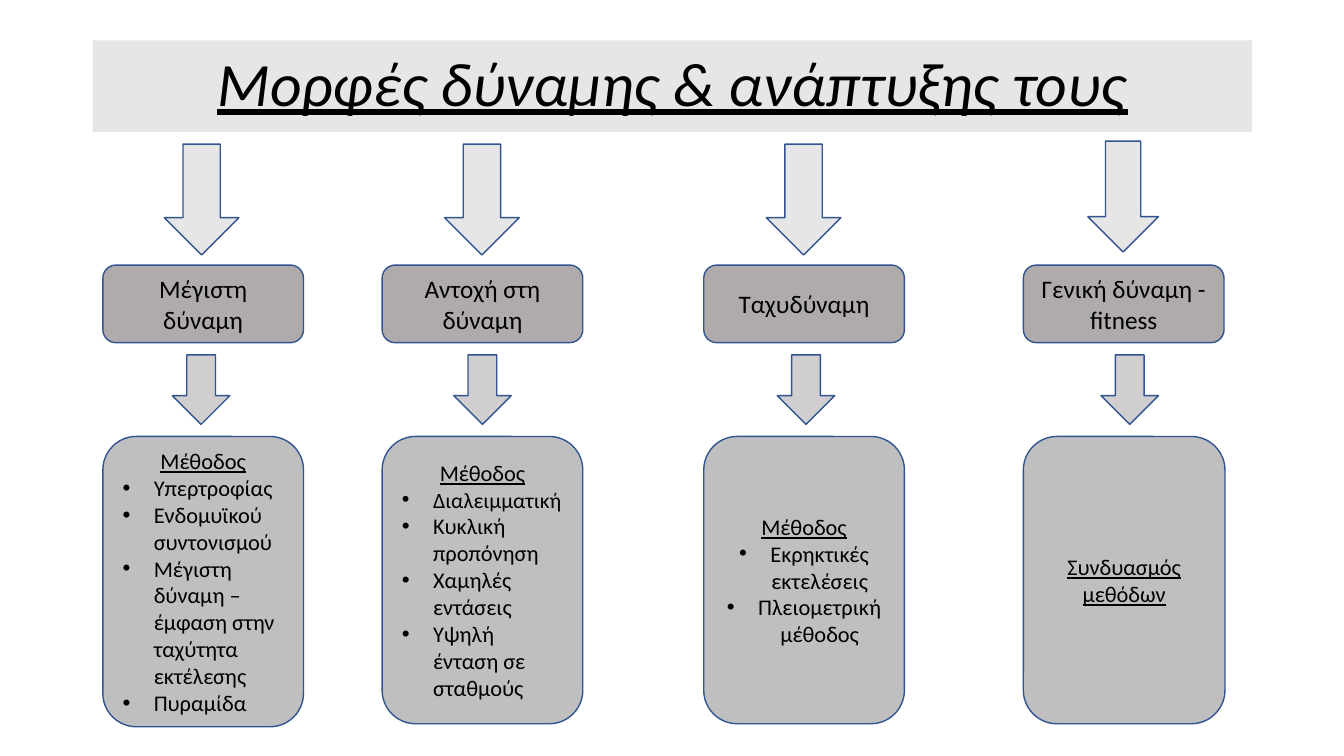
from lxml import etree
from pptx import Presentation
from pptx import util as u
from pptx.dml import color
from pptx.enum import shapes, text
from pptx.oxml import ns


def paint(value):
    return color.RGBColor.from_string(value)


class Diagram:
    """Draws the styled elements of one slide."""

    font = "Calibri"
    ink = "000000"
    outline = "325491"
    indent = 0.31

    def __init__(self, page):
        self.page = page

    def shape(self, kind, place, fill, line=True):
        item = self.page.shapes.add_shape(kind, *[u.Inches(length) for length in place])
        item.shadow.inherit = False
        item.fill.solid()
        item.fill.fore_color.rgb = paint(fill)
        if line:
            item.line.color.rgb = paint(self.outline)
            item.line.width = u.Pt(1)
        else:
            item.line.fill.background()
        return item

    def arrow(self, place, fill):
        return self.shape(shapes.MSO_SHAPE.DOWN_ARROW, place, fill)

    def box(self, place, fill):
        return self.shape(shapes.MSO_SHAPE.ROUNDED_RECTANGLE, place, fill)

    def title(self, place, fill, words):
        banner = self.shape(shapes.MSO_SHAPE.RECTANGLE, place, fill, line=False)
        para = self.label(banner, [words], 44, underline=True)[0]
        para.line_spacing = 0.9
        para.runs[0].font.italic = True

    def label(self, item, lines, size, underline=False):
        frame = item.text_frame
        frame.word_wrap = True
        frame.vertical_anchor = text.MSO_ANCHOR.MIDDLE
        frame.text = "\n".join(lines)
        for para in frame.paragraphs:
            para.alignment = text.PP_ALIGN.CENTER
            for span in para.runs:
                span.font.name = self.font
                span.font.size = u.Pt(size)
                span.font.color.rgb = paint(self.ink)
        frame.paragraphs[0].runs[0].font.underline = underline
        return frame.paragraphs

    def methods(self, item, heading, entries, align):
        paras = self.label(item, [heading, *entries], 16, underline=True)
        for para in paras[1:]:
            para.alignment = align
            self.bullet(para)
        return paras

    def bullet(self, para):
        props = para._p.get_or_add_pPr()
        props.set("marL", str(u.Inches(self.indent)))
        props.set("indent", str(-u.Inches(self.indent)))
        etree.SubElement(props, ns.qn("a:buFont")).set("typeface", "Arial")
        etree.SubElement(props, ns.qn("a:buChar")).set("char", "•")


def main():
    deck = Presentation()
    deck.slide_width, deck.slide_height = u.Inches(13.33), u.Inches(7.5)
    diagram = Diagram(deck.slides.add_slide(deck.slide_layouts[6]))
    diagram.title((0.92, 0.4, 11.5, 0.91), "E7E6E6", "Μορφές δύναμης & ανάπτυξης τους")

    left, center = text.PP_ALIGN.LEFT, text.PP_ALIGN.CENTER
    columns = [
        (1.02, (1.63, 1.43, 0.74, 1.1), 1.71, (1.99, 2.88), "Μέγιστη δύναμη", "Μέθοδος",
         ["Υπερτροφίας", "Ενδομυϊκού συντονισμού",
          "Μέγιστη δύναμη – έμφαση στην ταχύτητα εκτέλεσης", "Πυραμίδα"], left),
        (3.79, (4.41, 1.43, 0.74, 1.1), 4.5, (1.99, 2.85), "Αντοχή στη δύναμη", "Μέθοδος",
         ["Διαλειμματική", "Κυκλική προπόνηση", "Χαμηλές εντάσεις",
          "Υψηλή ένταση σε σταθμούς"], left),
        (6.98, (7.6, 1.43, 0.74, 1.1), 7.71, (1.99, 2.85), "Ταχυδύναμη", "Μέθοδος",
         ["Εκρηκτικές εκτελέσεις", "Πλειομετρική μέθοδος"], center),
        (10.15, (10.79, 1.4, 0.7, 1.1), 10.92, (2, 2.85), "Γενική δύναμη - fitness",
         "Συνδυασμός μεθόδων", [], center),
    ]
    for x, big_arrow, small_x, size, form, heading, entries, align in columns:
        diagram.arrow(big_arrow, "E7E6E6")
        diagram.label(diagram.box((x, 2.63, 1.99, 0.77), "AFABAB"), [form], 18)
        diagram.arrow((small_x, 3.52, 0.57, 0.69), "D0CECE")
        panel = diagram.box((x, 4.33, *size), "BFBFBF")
        for para in diagram.methods(panel, heading, entries, align):
            if para.text == "Διαλειμματική":
                para.runs[0].font.size = u.Pt(15.5)

    deck.save("out.pptx")


if __name__ == "__main__":
    main()
